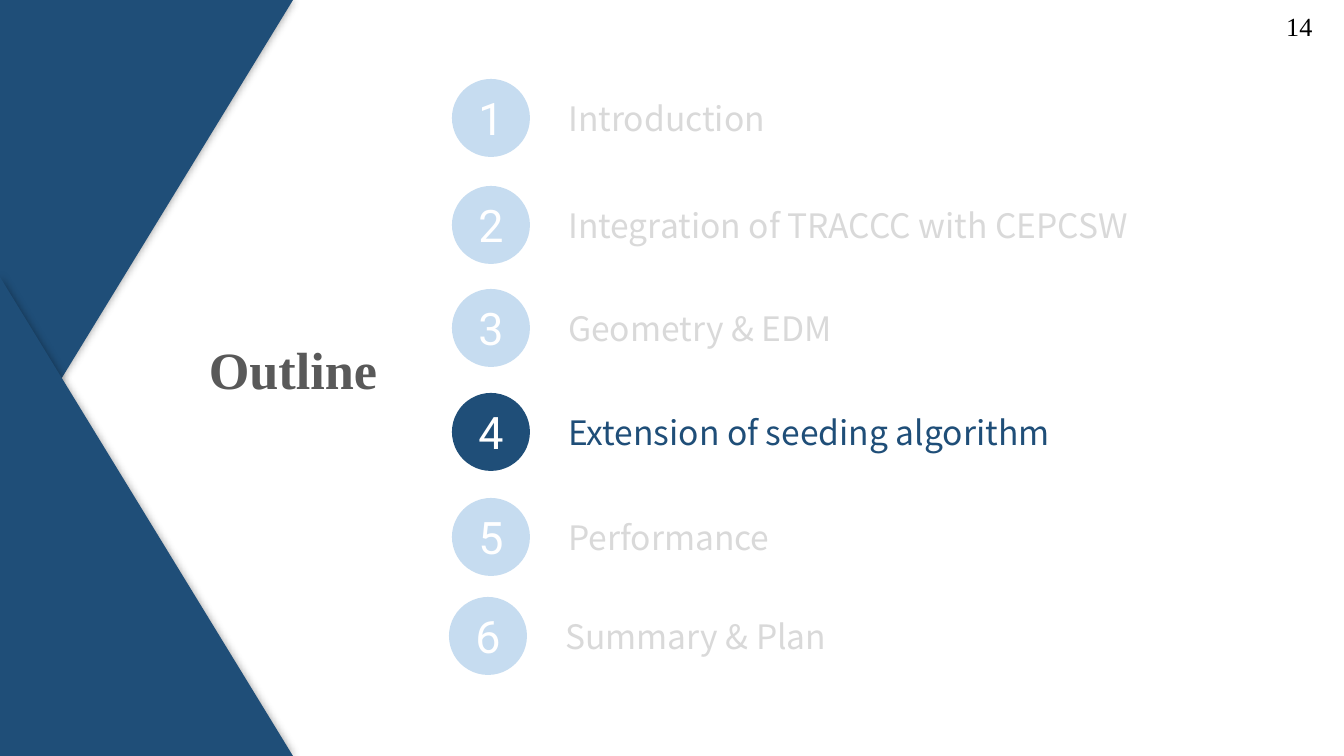
"""Build the outline slide with its fourth section highlighted."""
from dataclasses import dataclass

import lxml.etree
import pptx
import pptx.dml.color
import pptx.enum.shapes
import pptx.enum.text
import pptx.oxml.ns
import pptx.util

ALIGN = pptx.enum.text.PP_ALIGN
ANCHOR = pptx.enum.text.MSO_ANCHOR
SHAPE = pptx.enum.shapes.MSO_SHAPE


@dataclass(frozen=True)
class Theme:
    """Colours, fonts and type sizes of the slide."""
    navy: str = "1F4E78"
    pale_blue: str = "C6DCF0"
    pale_grey: str = "D9D9D9"
    dark_grey: str = "595959"
    white: str = "FFFFFF"
    black: str = "000000"
    serif: str = "Times New Roman"
    number_font: str = "Roboto"
    label_font: str = "Noto Sans CJK SC"
    title_size: int = 28
    number_size: int = 24
    label_size: int = 18
    page_size: int = 14


def px(length):
    """Turn px into EMU."""
    return round(length * 914400 / 134.4)


def color(value):
    """Turn a hex string into a colour."""
    return pptx.dml.color.RGBColor.from_string(value)


def write(shape, text, *, font, size, ink, bold=False, align=ALIGN.LEFT,
          anchor=ANCHOR.TOP, wrap=True):
    """Write one formatted paragraph into a shape."""
    frame = shape.text_frame
    frame.auto_size = pptx.enum.text.MSO_AUTO_SIZE.NONE
    frame.word_wrap = wrap
    frame.vertical_anchor = anchor
    paragraph = frame.paragraphs[0]
    paragraph.alignment = align
    run = paragraph.add_run()
    run.text = text
    run.font.name = font
    run.font.size = pptx.util.Pt(size)
    run.font.bold = bold
    run.font.color.rgb = color(ink)


class OutlineSlide:
    """Draws the elements of an outline slide in one style."""

    def __init__(self, presentation, theme):
        """Add a slide that has only a title placeholder."""
        self.theme = theme
        self.slide = presentation.slides.add_slide(presentation.slide_layouts[5])

    def filled_shape(self, kind, box, fill):
        """Add a preset shape without an outline."""
        shape = self.slide.shapes.add_shape(kind, *map(px, box))
        shape.shadow.inherit = False
        shape.fill.solid()
        shape.fill.fore_color.rgb = color(fill)
        shape.line.fill.background()
        return shape

    def corner(self, box, rotation=0):
        """Add a navy corner triangle with a soft shadow."""
        shape = self.filled_shape(SHAPE.RIGHT_TRIANGLE, box, self.theme.navy)
        shape.rotation = rotation
        qn = pptx.oxml.ns.qn
        effects = shape._element.spPr.find(qn("a:effectLst"))
        shadow = lxml.etree.SubElement(
            effects, qn("a:outerShdw"), blurRad=str(pptx.util.Pt(5)),
            dist="0", dir="0", algn="ctr", rotWithShape="0")
        shade = lxml.etree.SubElement(shadow, qn("a:srgbClr"), val=self.theme.black)
        lxml.etree.SubElement(shade, qn("a:alpha"), val="40000")

    def title(self, text, box):
        """Fill and place the title placeholder."""
        shape = self.slide.shapes.title
        shape.left, shape.top, shape.width, shape.height = map(px, box)
        write(shape, text, font=self.theme.serif, size=self.theme.title_size,
              ink=self.theme.dark_grey, bold=True, align=ALIGN.CENTER,
              anchor=ANCHOR.MIDDLE)

    def text(self, text, box, **style):
        """Add a text box."""
        write(self.slide.shapes.add_textbox(*map(px, box)), text, **style)

    def section(self, number, label, left, top, width, active):
        """Add a numbered disc and its label."""
        theme = self.theme
        disc = self.filled_shape(SHAPE.OVAL, (left, top, 78, 78),
                                 theme.navy if active else theme.pale_blue)
        write(disc, str(number), font=theme.number_font, size=theme.number_size,
              ink=theme.white, align=ALIGN.CENTER, anchor=ANCHOR.MIDDLE)
        self.text(label, (left + 103, top + 12, width, 54), wrap=False,
                  font=theme.label_font, size=theme.label_size,
                  ink=theme.navy if active else theme.pale_grey)


SECTIONS = [
    ("Introduction", 452, 79, 228),
    ("Integration of TRACCC with CEPCSW", 452, 186, 620),
    ("Geometry & EDM", 452, 289, 327),
    ("Extension of seeding algorithm", 452, 393, 532),
    ("Performance", 452, 498, 234),
    ("Summary & Plan", 449, 597, 301),
]
ACTIVE_SECTION = 4


def main():
    """Build and save the presentation."""
    presentation = pptx.Presentation()
    presentation.slide_width, presentation.slide_height = px(1344), px(756)
    theme = Theme()
    outline = OutlineSlide(presentation, theme)
    outline.corner((-93, 93, 479, 293), rotation=90)
    outline.corner((0, 277, 293, 479))
    outline.title("Outline", (82, 330, 422, 78))
    for number, (label, left, top, width) in enumerate(SECTIONS, start=1):
        outline.section(number, label, left, top, width, number == ACTIVE_SECTION)
    outline.text("14", (1273, 4, 63, 35), font=theme.serif,
                 size=theme.page_size, ink=theme.black)
    presentation.save("out.pptx")


if __name__ == "__main__":
    main()
